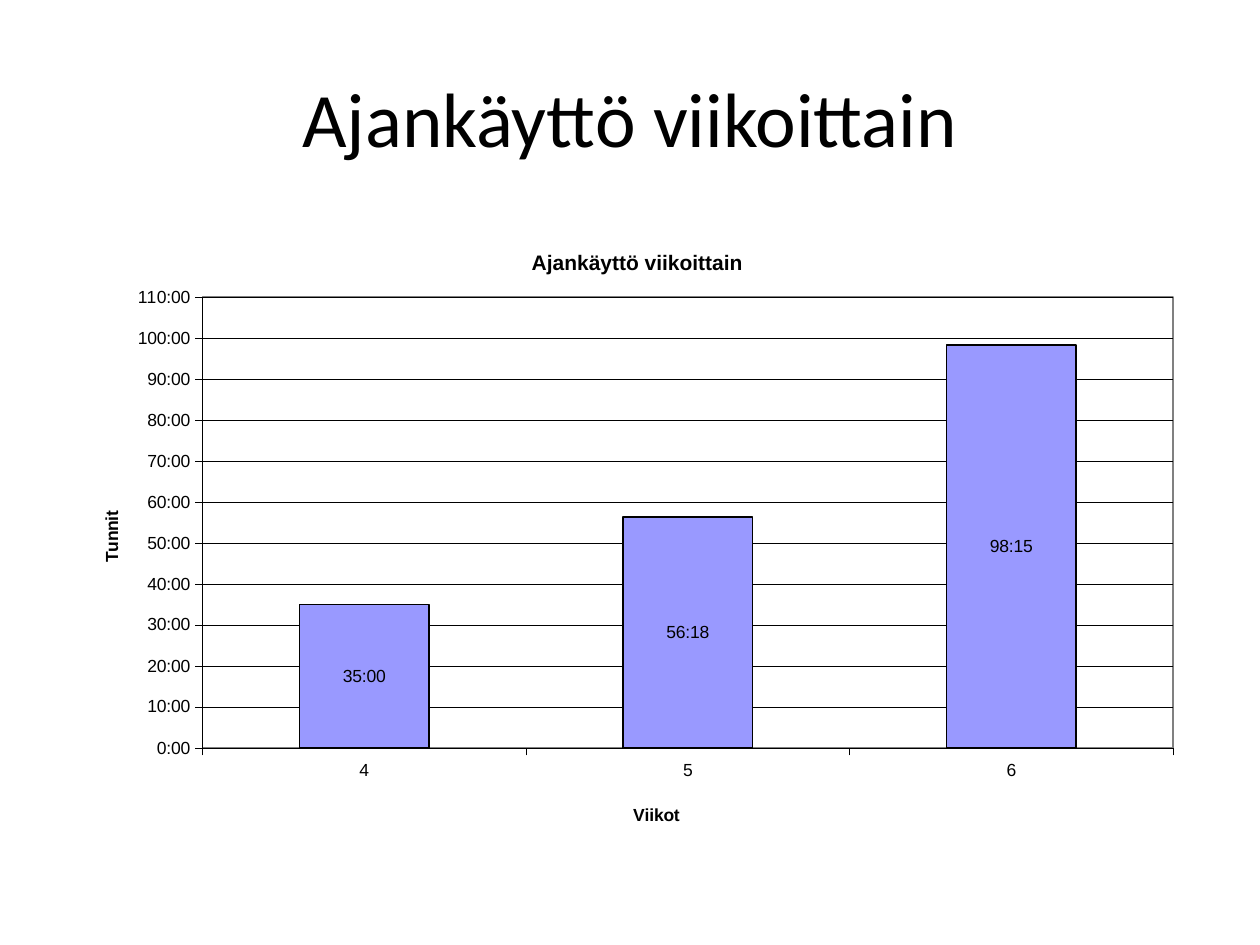
"""Build a slide with a column chart of the hours used per week."""
from pptx import Presentation
from pptx.chart.data import CategoryChartData
from pptx.dml.color import RGBColor
from pptx.enum.chart import XL_CHART_TYPE as ChartType, XL_LABEL_POSITION as LabelPosition
from pptx.enum.chart import XL_TICK_MARK as TickMark
from pptx.enum.text import MSO_ANCHOR, PP_ALIGN
from pptx.oxml import parse_xml
from pptx.oxml.ns import nsdecls, qn
from pptx.util import Inches, Pt

BLACK = RGBColor(0x00, 0x00, 0x00)
LILAC = RGBColor(0x99, 0x99, 0xFF)
HOURS_FORMAT = "[h]:mm"
HOURS_PER_DAY = 24
HEADING = "Ajankäyttö viikoittain"


def write_title(frame, text, size, font_name, bold):
    paragraph = frame.paragraphs[0]
    paragraph.alignment = PP_ALIGN.CENTER
    run = paragraph.add_run()
    run.text = text
    run.font.size = Pt(size)
    run.font.name = font_name
    run.font.bold = bold
    run.font.color.rgb = BLACK


def place(element, index, target="", **shares):
    for old in element.findall(qn("c:layout")):
        element.remove(old)
    modes = "".join(f'<c:{axis}Mode val="edge"/>' for axis in "xy")
    sizes = "".join(f'<c:{key} val="{share}"/>' for key, share in shares.items())
    element.insert(index, parse_xml(
        f'<c:layout {nsdecls("c")}><c:manualLayout>{target}{modes}{sizes}'
        "</c:manualLayout></c:layout>"))


prs = Presentation()
prs.slide_width, prs.slide_height = Inches(10), Inches(7.5)
width, height = prs.slide_width, prs.slide_height
margin = int(width * 0.05)
content_width = width - 2 * margin
slide = prs.slides.add_slide(prs.slide_layouts[5])

heading = slide.shapes.title
heading.left, heading.top = margin, int(height * 0.04)
heading.width, heading.height = content_width, Inches(1.25)
heading.text_frame.vertical_anchor = MSO_ANCHOR.MIDDLE
write_title(heading.text_frame, HEADING, 44, "Calibri", False)

weekly_time = {"4": (35, 0), "5": (56, 18), "6": (98, 15)}
data = CategoryChartData(number_format=HOURS_FORMAT)
data.categories = list(weekly_time)
data.add_series("Series 1", [
    round((hours + minutes / 60) / HOURS_PER_DAY, 6)
    for hours, minutes in weekly_time.values()])
chart = slide.shapes.add_chart(
    ChartType.COLUMN_STACKED, margin, Inches(1.75),
    content_width, int(height * 0.66), data).chart
chart.has_legend = False
chart.font.size, chart.font.name = Pt(10), "Arial"
chart.font.color.rgb = BLACK

weeks, hours_axis = chart.category_axis, chart.value_axis
hours_axis.minimum_scale = 0
hours_axis.maximum_scale = 110 / HOURS_PER_DAY
hours_axis.major_unit = 10 / HOURS_PER_DAY
hours_axis.has_major_gridlines = True
hours_axis.tick_labels.number_format = HOURS_FORMAT
hours_axis.tick_labels.number_format_is_linked = False
for axis in (weeks, hours_axis):
    axis.major_tick_mark, axis.minor_tick_mark = TickMark.OUTSIDE, TickMark.NONE
    axis.tick_labels.font.size, axis.tick_labels.font.name = Pt(10), "Arial"
    axis.tick_labels.font.color.rgb = BLACK
for line in (weeks.format.line, hours_axis.format.line,
             hours_axis.major_gridlines.format.line):
    line.color.rgb = BLACK
    line.width = Pt(0.25)

for title, text, size, x, y in (
        (chart.chart_title, HEADING, 12, 0.41, 0.04),
        (weeks.axis_title, "Viikot", 10, 0.5, 0.93),
        (hours_axis.axis_title, "Tunnit", 10, 0.03, 0.46)):
    write_title(title.text_frame, text, size, "Arial", True)
    place(title._element, 1, x=x, y=y)
hours_axis.axis_title.text_frame._txBody.bodyPr.set("rot", "-5400000")
hours_axis.axis_title.text_frame._txBody.bodyPr.set("vert", "horz")

plot = chart.plots[0]
plot.gap_width, plot.overlap = 150, 100
plot.vary_by_categories = False
bars = plot.series[0]
bars.invert_if_negative = False
bars.format.fill.solid()
bars.format.fill.fore_color.rgb = LILAC
bars.format.line.color.rgb = BLACK
bars.format.line.width = Pt(1)
labels = bars.data_labels
labels.show_value = True
labels.position = LabelPosition.CENTER
labels.number_format, labels.number_format_is_linked = HOURS_FORMAT, False
labels.font.size, labels.font.name = Pt(10), "Arial"
labels.font.color.rgb = BLACK

plot_area = chart._chartSpace.chart.plotArea
place(plot_area, 0, '<c:layoutTarget val="inner"/>', x=0.123, y=0.123, w=0.856, h=0.723)
plot_area.append(parse_xml(
    f'<c:spPr {nsdecls("c", "a")}><a:noFill/><a:ln w="{Pt(1)}"><a:solidFill>'
    '<a:srgbClr val="808080"/></a:solidFill></a:ln></c:spPr>'))

prs.save("out.pptx")
